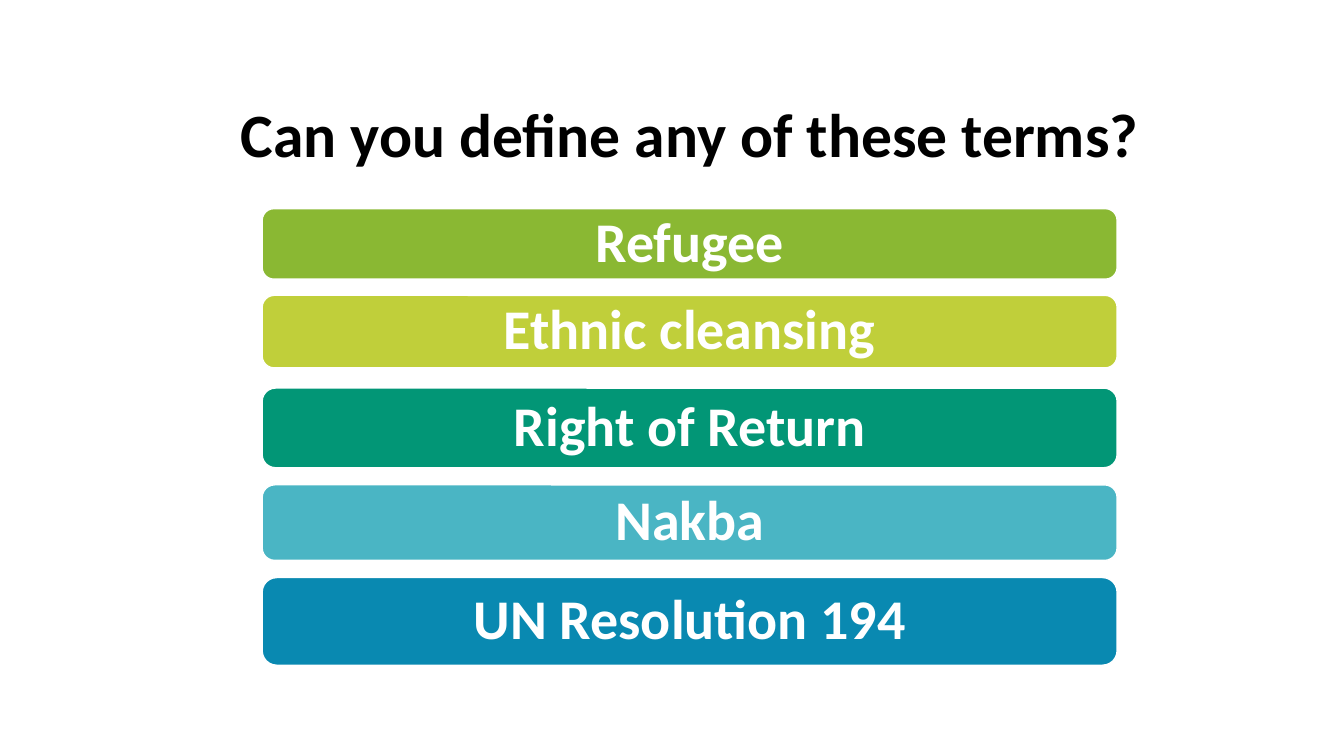
from pptx import Presentation
from pptx.dml.color import RGBColor
from pptx.enum.shapes import MSO_SHAPE
from pptx.enum.text import MSO_ANCHOR, PP_ALIGN
from pptx.util import Pt

PX = 9144
BLACK = RGBColor(0x00, 0x00, 0x00)
WHITE = RGBColor(0xFF, 0xFF, 0xFF)
GREEN = RGBColor(0x8A, 0xB8, 0x33)
LIME = RGBColor(0xC0, 0xCF, 0x3A)
TEAL = RGBColor(0x02, 0x96, 0x76)
AQUA = RGBColor(0x4A, 0xB5, 0xC4)
BLUE = RGBColor(0x09, 0x89, 0xB1)

TERMS = [
    ("Refugee", 207, 70, GREEN),
    ("Ethnic cleansing", 293, 72, LIME),
    ("Right of Return", 385, 79, TEAL),
    ("Nakba", 481, 75, AQUA),
    ("UN Resolution 194", 573, 87, BLUE),
]


class Canvas:
    font = {"name": "Calibri", "bold": True}
    frame = {
        "word_wrap": True,
        "vertical_anchor": MSO_ANCHOR.MIDDLE,
        "margin_top": 0,
        "margin_bottom": 0,
    }
    para = {"alignment": PP_ALIGN.CENTER, "line_spacing": 0.9}

    def __init__(self, slide):
        self.slide = slide

    def apply(self, item, values):
        for key, value in values.items():
            setattr(item, key, value)

    def label(self, shape, text, size, color):
        frame = shape.text_frame
        self.apply(frame, self.frame)
        para = frame.paragraphs[0]
        self.apply(para, self.para)
        run = para.add_run()
        run.text = text
        self.apply(run.font, {**self.font, "size": Pt(size)})
        run.font.color.rgb = color

    def title(self, text, *box):
        shape = self.slide.shapes.add_textbox(*(n * PX for n in box))
        self.label(shape, text, 44, BLACK)

    def bar(self, text, fill, *box):
        shape = self.slide.shapes.add_shape(
            MSO_SHAPE.ROUNDED_RECTANGLE, *(n * PX for n in box))
        shape.shadow.inherit = False
        shape.fill.solid()
        shape.fill.fore_color.rgb = fill
        shape.line.color.rgb = WHITE
        shape.line.width = Pt(1)
        self.label(shape, text, 40, WHITE)


def main():
    deck = Presentation()
    deck.slide_width = 1333 * PX
    deck.slide_height = 750 * PX
    canvas = Canvas(deck.slides.add_slide(deck.slide_layouts[6]))
    canvas.title("Can you define any of these terms?", 36, 64, 1297, 145)
    for text, top, height, fill in TERMS:
        canvas.bar(text, fill, 260, top, 848, height)
    deck.save("out.pptx")


if __name__ == "__main__":
    main()
